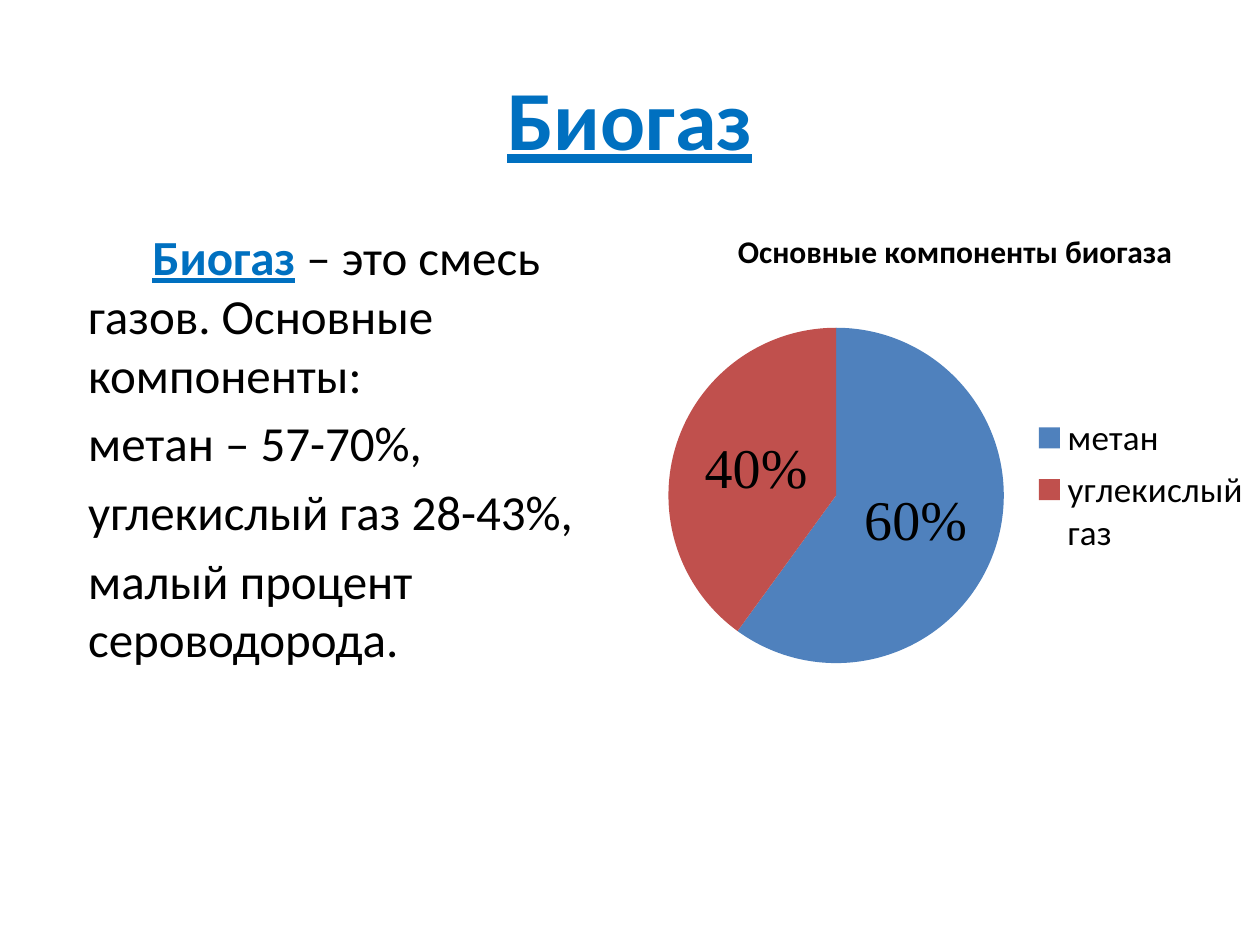
import pptx
import pptx.chart.data
import pptx.dml.color
import pptx.enum.chart
import pptx.enum.text
import pptx.oxml
import pptx.oxml.ns
import pptx.util

COLORS = {"accent": "0070C0", "text": "000000", "methane": "4F81BD", "dioxide": "C0504D"}
FONT = "Calibri"
LABEL_FONT = "Times New Roman"
WIDTH, HEIGHT = 10, 7.5

TITLE = "Биогаз"
# Each paragraph: first-line indent in inches, then (text, is a term) spans
PARAGRAPHS = [
    (0.51, [("Биогаз", True), (" – это смесь газов. Основные компоненты:", False)]),
    (0, [("метан – 57-70%,", False)]),
    (0, [("углекислый газ 28-43%,", False)]),
    (0, [("малый процент сероводорода.", False)]),
]
CHART_TITLE = "Основные компоненты биогаза"
COMPONENTS = [("метан", 60, "methane"), ("углекислый газ", 40, "dioxide")]

# Left, top, width, height as shares of the slide
AREAS = {
    "title": (0.05, 0.04, 0.9, 1 / 6),
    "body": (0.05, 0.233, 0.466, 0.66),
    "chart": (0.516, 0.219, 0.484, 0.531),
}
# Left, top, width, height as shares of the chart
PIE_AREA = (0.03, 0.24, 0.55, 0.67)
LEGEND_AREA = (0.63, 0.4, 0.36, 0.31)


def area(name):
    return [pptx.util.Inches(share * side)
            for share, side in zip(AREAS[name], (WIDTH, HEIGHT) * 2)]


def place(shape, name):
    shape.left, shape.top, shape.width, shape.height = area(name)


def format_font(font, size, color="text", name=FONT, bold=False, underline=None):
    font.size = pptx.util.Pt(size)
    font.name = name
    font.bold = bold
    if underline is not None:
        font.underline = underline
    font.color.rgb = pptx.dml.color.RGBColor.from_string(COLORS[color])


def add_text(para, text, **style):
    span = para.add_run()
    span.text = text
    format_font(span.font, **style)


def set_layout(element, before, shares, inner=False):
    """Fix the position of a chart part, placing the layout ahead of one of the named tags."""
    for old in element.findall(pptx.oxml.ns.qn("c:layout")):
        element.remove(old)
    target = '<c:layoutTarget val="inner"/>' if inner else ""
    modes = "".join(f'<c:{side}Mode val="edge"/>' for side in "xy")
    sizes = "".join(f'<c:{side} val="{share}"/>' for side, share in zip("xywh", shares))
    layout = pptx.oxml.parse_xml(
        f'<c:layout {pptx.oxml.ns.nsdecls("c")}><c:manualLayout>'
        f"{target}{modes}{sizes}</c:manualLayout></c:layout>")
    tags = [pptx.oxml.ns.qn(tag) for tag in before]
    next(child for child in element if child.tag in tags).addprevious(layout)


def add_body(body):
    place(body, "body")
    frame = body.text_frame
    frame.word_wrap = True
    frame.auto_size = pptx.enum.text.MSO_AUTO_SIZE.NONE
    for index, (indent, spans) in enumerate(PARAGRAPHS):
        para = frame.add_paragraph() if index else frame.paragraphs[0]
        for text, term in spans:
            add_text(para, text, size=28, color="accent" if term else "text",
                     bold=term, underline=term)
        properties = para._p.get_or_add_pPr()
        properties.set("marL", str(pptx.util.Inches(0.1)))
        properties.set("indent", str(pptx.util.Inches(indent)))
        properties.append(pptx.oxml.parse_xml(f'<a:buNone {pptx.oxml.ns.nsdecls("a")}/>'))


def add_pie(page):
    data = pptx.chart.data.CategoryChartData()
    data.categories = [name for name, _, _ in COMPONENTS]
    data.add_series("Series 1", [value for _, value, _ in COMPONENTS])
    chart = page.shapes.add_chart(
        pptx.enum.chart.XL_CHART_TYPE.PIE, *area("chart"), data).chart
    format_font(chart.font, 10)

    chart.has_title = True
    add_text(chart.chart_title.text_frame.paragraphs[0], CHART_TITLE, size=18, bold=True)
    chart.chart_title.include_in_layout = False

    chart.has_legend = True
    chart.legend.position = pptx.enum.chart.XL_LEGEND_POSITION.RIGHT
    chart.legend.include_in_layout = False
    format_font(chart.legend.font, 20)

    plot = chart.plots[0]
    plot.vary_by_categories = True
    for index, (_, _, color) in enumerate(COMPONENTS):
        fill = plot.series[0].points[index].format.fill
        fill.solid()
        fill.fore_color.rgb = pptx.dml.color.RGBColor.from_string(COLORS[color])
    labels = plot.series[0].data_labels
    labels.show_percentage = True
    labels.show_value = False
    labels.number_format = "0%"
    labels.number_format_is_linked = False
    labels.position = pptx.enum.chart.XL_LABEL_POSITION.CENTER
    format_font(labels.font, 32, name=LABEL_FONT)

    plot_area = chart._chartSpace.chart.plotArea
    set_layout(plot_area, ["c:pieChart"], PIE_AREA, inner=True)
    set_layout(chart.legend._element, ["c:overlay", "c:txPr"], LEGEND_AREA)


def main():
    deck = pptx.Presentation()
    deck.slide_width = pptx.util.Inches(WIDTH)
    deck.slide_height = pptx.util.Inches(HEIGHT)
    page = deck.slides.add_slide(deck.slide_layouts[1])

    title = page.shapes.title
    place(title, "title")
    title.text_frame.vertical_anchor = pptx.enum.text.MSO_ANCHOR.MIDDLE
    heading = title.text_frame.paragraphs[0]
    heading.alignment = pptx.enum.text.PP_ALIGN.CENTER
    add_text(heading, TITLE, size=48, color="accent", bold=True, underline=True)

    add_body(page.placeholders[1])
    add_pie(page)
    deck.save("out.pptx")


if __name__ == "__main__":
    main()
